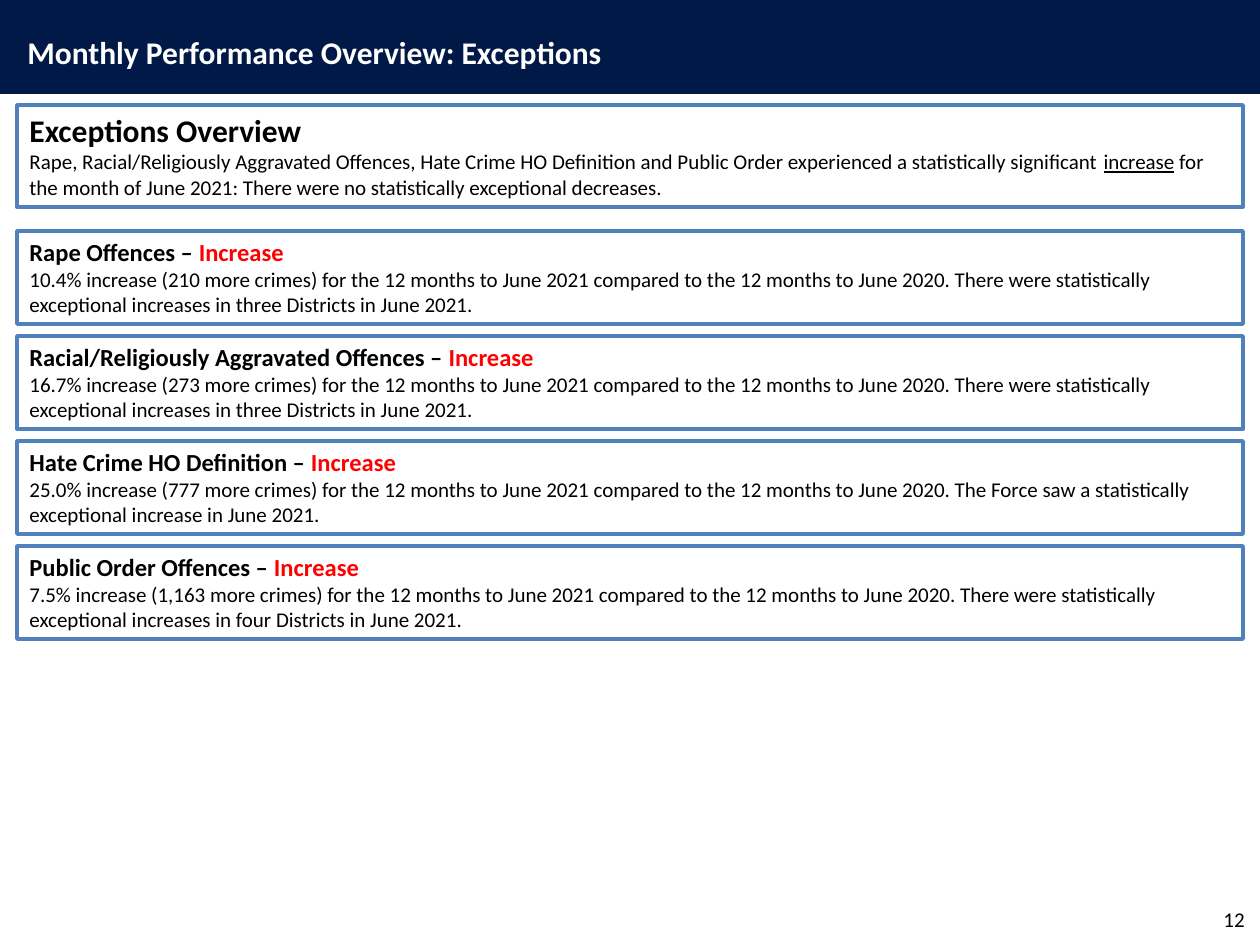
import dataclasses

import pptx
import pptx.dml.color
import pptx.enum.shapes
import pptx.enum.text
import pptx.util

EMU_PER_PX = 914400 / 126
PAGE_WIDTH, PAGE_HEIGHT = 1260, 945
CARD_LEFT, CARD_WIDTH, CARD_HEIGHT = 17, 1226, 93
FIRST_CARD_TOP, CARD_PITCH = 231, 105


@dataclasses.dataclass(frozen=True)
class Theme:
    font: str = "Calibri"
    navy: str = "001947"
    border: str = "4F81BD"
    white: str = "FFFFFF"
    black: str = "000000"
    alert: str = "FF0000"
    title_size: int = 18
    heading_size: int = 14
    body_size: int = 12
    border_width: int = 2


THEME = Theme()
COMPARISON = "for the 12 months to June 2021 compared to the 12 months to June 2020."
EXCEPTIONS = [
    ("Rape Offences", "10.4% increase (210 more crimes)",
     "There were statistically exceptional increases in three Districts in June 2021."),
    ("Racial/Religiously Aggravated Offences", "16.7% increase (273 more crimes)",
     "There were statistically exceptional increases in three Districts in June 2021."),
    ("Hate Crime HO Definition", "25.0% increase (777 more crimes)",
     "The Force saw a statistically exceptional increase in June 2021."),
    ("Public Order Offences", "7.5% increase (1,163 more crimes)",
     "There were statistically exceptional increases in four Districts in June 2021."),
]


def px(length):
    return pptx.util.Emu(round(length * EMU_PER_PX))


def rgb(colour):
    return pptx.dml.color.RGBColor.from_string(colour)


def style_paragraph(para, size, bold=False, colour=THEME.black,
                    align=pptx.enum.text.PP_ALIGN.LEFT):
    para.alignment = align
    para.font.name = THEME.font
    para.font.size = pptx.util.Pt(size)
    para.font.bold = bold
    para.font.color.rgb = rgb(colour)


def add_span(para, text):
    span = para.add_run()
    span.text = text
    return span


def add_rectangle(page, left, top, width, height, fill):
    box = page.shapes.add_shape(pptx.enum.shapes.MSO_SHAPE.RECTANGLE,
                                px(left), px(top), px(width), px(height))
    box.shadow.inherit = False
    box.fill.solid()
    box.fill.fore_color.rgb = rgb(fill)
    box.line.fill.background()
    return box


def add_label(page, left, top, width, height, text, **style):
    box = page.shapes.add_textbox(px(left), px(top), px(width), px(height))
    frame = box.text_frame
    frame.word_wrap = True
    frame.vertical_anchor = pptx.enum.text.MSO_ANCHOR.MIDDLE
    para = frame.paragraphs[0]
    add_span(para, text)
    style_paragraph(para, **style)


def add_card(page, top, height, heading_size):
    """Add a bordered box and return its heading and body paragraphs."""
    box = add_rectangle(page, CARD_LEFT, top, CARD_WIDTH, height, THEME.white)
    box.line.color.rgb = rgb(THEME.border)
    box.line.width = pptx.util.Pt(THEME.border_width)
    frame = box.text_frame
    frame.word_wrap = True
    frame.auto_size = pptx.enum.text.MSO_AUTO_SIZE.SHAPE_TO_FIT_TEXT
    frame.vertical_anchor = pptx.enum.text.MSO_ANCHOR.TOP
    heading, body = frame.paragraphs[0], frame.add_paragraph()
    style_paragraph(heading, heading_size, bold=True)
    style_paragraph(body, THEME.body_size)
    return heading, body


def add_overview(page):
    heading, body = add_card(page, 105, 102, THEME.title_size)
    add_span(heading, "Exceptions Overview")
    add_span(body, "Rape, Racial/Religiously Aggravated Offences, Hate Crime HO Definition "
                   "and Public Order experienced a statistically significant ")
    add_span(body, "increase").font.underline = True
    add_span(body, " for the month of June 2021: "
                   "There were no statistically exceptional decreases.")


def add_exception(page, top, offence, change, finding):
    heading, body = add_card(page, top, CARD_HEIGHT, THEME.heading_size)
    add_span(heading, f"{offence} – ")
    add_span(heading, "Increase").font.color.rgb = rgb(THEME.alert)
    add_span(body, f"{change} {COMPARISON} {finding}")


def main():
    deck = pptx.Presentation()
    deck.slide_width, deck.slide_height = px(PAGE_WIDTH), px(PAGE_HEIGHT)
    page = deck.slides.add_slide(deck.slide_layouts[6])

    add_rectangle(page, 0, 0, PAGE_WIDTH, 94, THEME.navy)
    add_label(page, 15, 26, 714, 51, "Monthly Performance Overview: Exceptions",
              size=THEME.title_size, bold=True, colour=THEME.white)
    add_label(page, 963, 894, 294, 50, "12", size=THEME.body_size,
              align=pptx.enum.text.PP_ALIGN.RIGHT)

    add_overview(page)
    for index, exception in enumerate(EXCEPTIONS):
        add_exception(page, FIRST_CARD_TOP + index * CARD_PITCH, *exception)

    deck.save("out.pptx")


if __name__ == "__main__":
    main()
